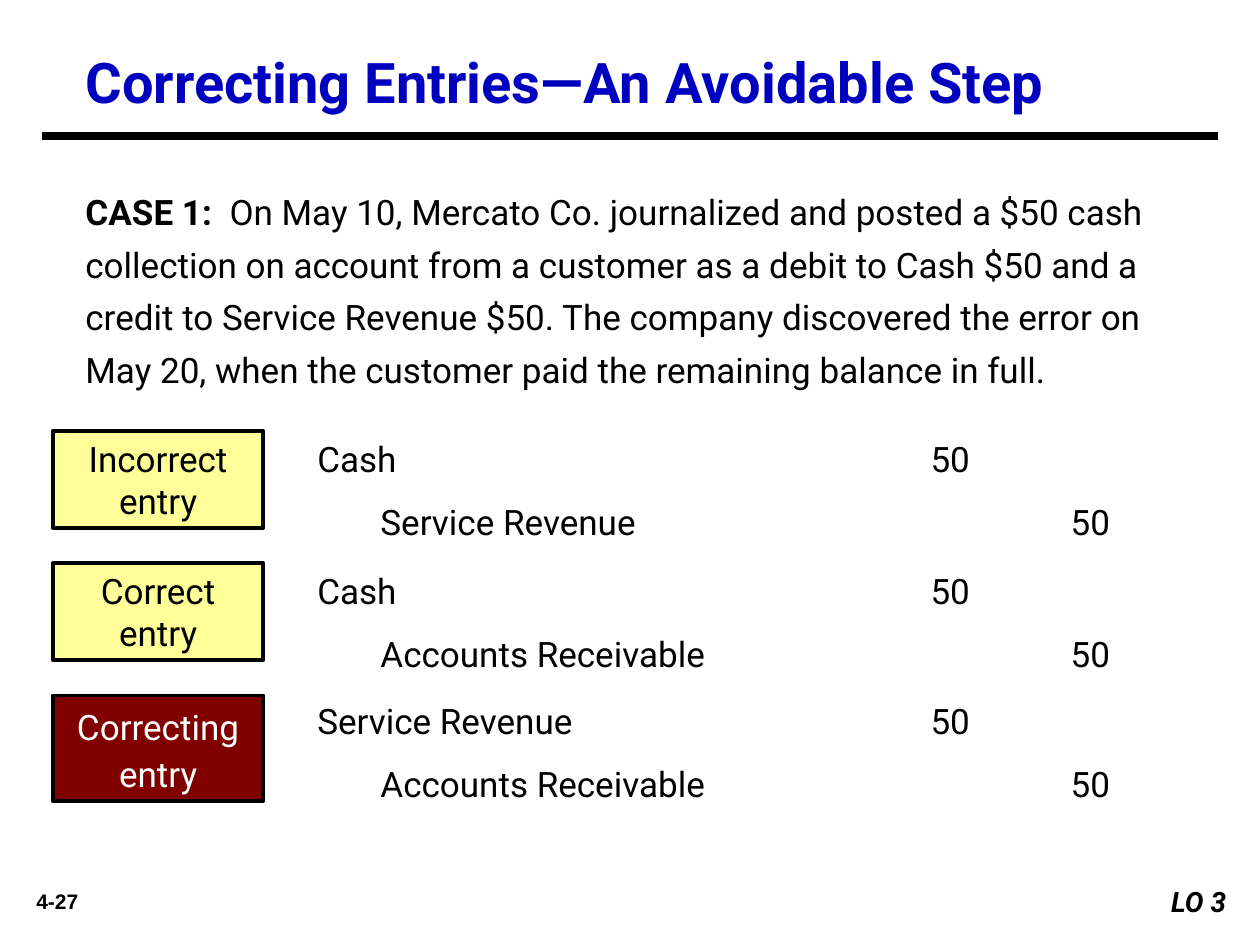
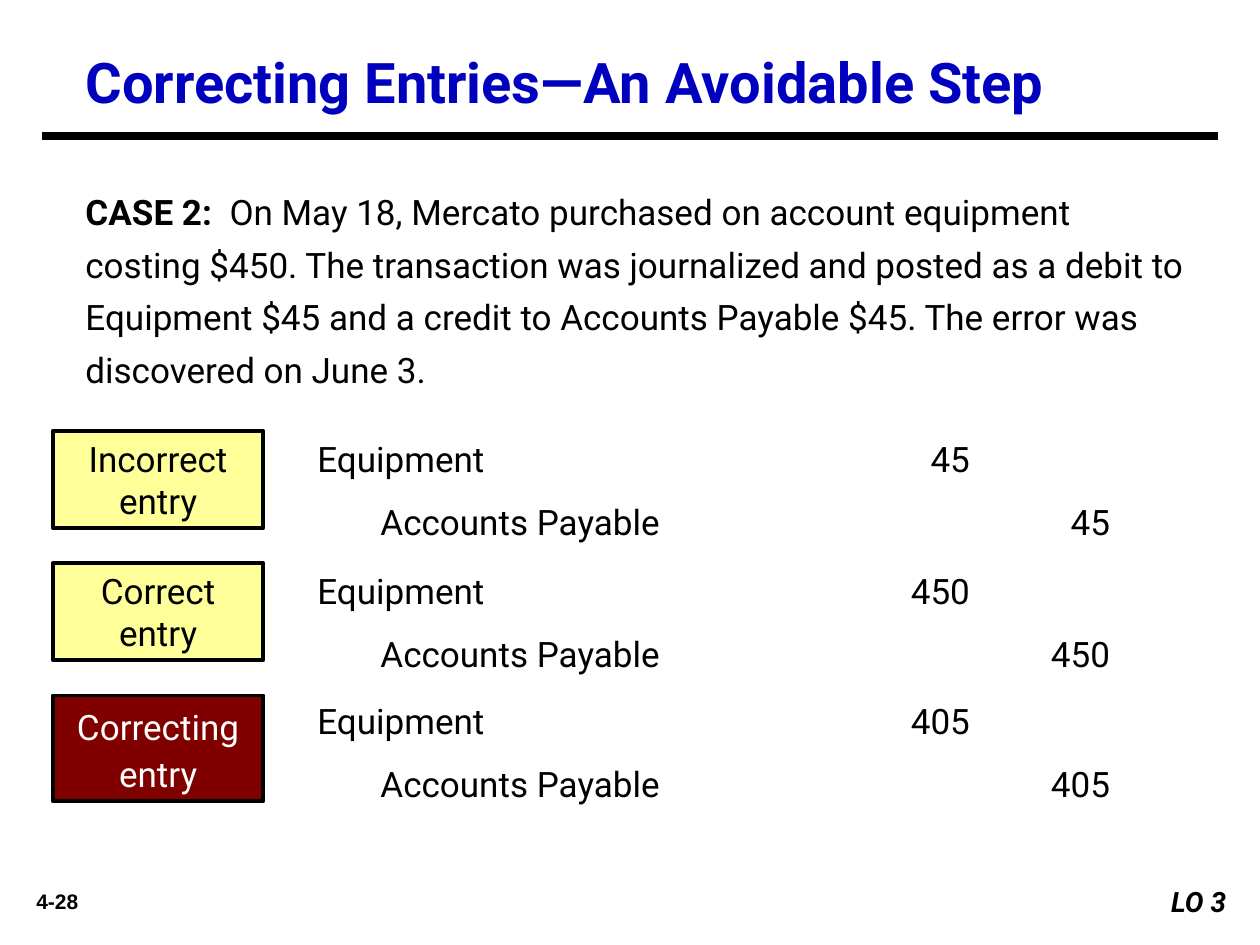
from lxml import etree
from pptx import Presentation
from pptx.dml.color import RGBColor
from pptx.enum.shapes import MSO_CONNECTOR, MSO_SHAPE
from pptx.enum.text import MSO_ANCHOR, PP_ALIGN
from pptx.oxml.ns import qn
from pptx.util import Inches, Pt

TITLE = "Correcting Entries—An Avoidable Step"
OBJECTIVE = "LO 3"

# Each entry: debit account, credit account, amount
CASES = [
    {
        "page": "4-27",
        "case": "CASE 1:  ",
        "story": "On May 10, Mercato Co. journalized and posted a $50 cash collection "
                 "on account from a customer as a debit to Cash $50 and a credit to "
                 "Service Revenue $50. The company discovered the error on May 20, "
                 "when the customer paid the remaining balance in full.",
        "entries": [
            ("Cash", "Service Revenue", "50"),
            ("Cash", "Accounts Receivable", "50"),
            ("Service Revenue", "Accounts Receivable", "50"),
        ],
    },
    {
        "page": "4-28",
        "case": "CASE 2:  ",
        "story": "On May 18, Mercato purchased on account equipment costing $450. "
                 "The transaction was journalized and posted as a debit to Equipment "
                 "$45 and a credit to Accounts Payable $45. The error was discovered "
                 "on June 3.",
        "entries": [
            ("Equipment", "Accounts Payable", "45"),
            ("Equipment", "Accounts Payable", "450"),
            ("Equipment", "Accounts Payable", "405"),
        ],
    },
]

BLACK = RGBColor(0x00, 0x00, 0x00)
WHITE = RGBColor(0xFF, 0xFF, 0xFF)
BLUE = RGBColor(0x00, 0x00, 0xBF)
YELLOW = RGBColor(0xFF, 0xFF, 0x99)
MAROON = RGBColor(0x80, 0x00, 0x00)

FONT = "Roboto"
FOOTER_FONT = "Arial"
LEFT, RIGHT, CENTER = PP_ALIGN.LEFT, PP_ALIGN.RIGHT, PP_ALIGN.CENTER
TOP = MSO_ANCHOR.TOP

# Label text, label top, label height, entry top, fill, text colour, line spacing
LABELS = [
    ("Incorrect\ventry", 3.42, 0.77, 3.42, YELLOW, BLACK, 1.0),
    ("Correct\ventry", 4.47, 0.77, 4.47, YELLOW, BLACK, 1.0),
    ("Correcting\ventry", 5.52, 0.84, 5.5, MAROON, WHITE, 1.1),
]

# Journal columns
JOURNAL_LEFT, JOURNAL_WIDTH = 2.42, 7
ROW_STEP, ROW_HEIGHT = 0.5, 0.45
DEBIT_INSET, CREDIT_INSET = 0.1, 0.6
DEBIT_EDGE, CREDIT_EDGE = 7.7, 8.81  # right edges of the amounts


def style(p, size=20, color=BLACK, bold=None, italic=None, name=FONT, align=LEFT):
    p.alignment = align
    p.font.size, p.font.name = Pt(size), name
    p.font.bold, p.font.italic = bold, italic
    p.font.color.rgb = color


def add_text(slide, text, left, top, width, height, **font):
    box = slide.shapes.add_textbox(*map(Inches, (left, top, width, height)))
    tf = box.text_frame
    tf.word_wrap = True
    p = tf.paragraphs[0]
    p.text = text
    style(p, **font)
    return tf


def add_box(slide, text, left, top, width, height, fill, line=None, **font):
    sp = slide.shapes.add_shape(MSO_SHAPE.RECTANGLE,
                                *map(Inches, (left, top, width, height)))
    sp.shadow.inherit = False
    sp.fill.solid()
    sp.fill.fore_color.rgb = fill
    if line is None:
        sp.line.fill.background()
    else:
        sp.line.color.rgb, sp.line.width = line, Pt(2.25)
    tf = sp.text_frame
    tf.vertical_anchor = TOP
    p = tf.paragraphs[0]
    p.text = text
    style(p, **font)
    return tf


def add_row(slide, account, amount, top, inset, edge):
    """Account at the inset, amount right-aligned at the column edge."""
    tf = add_text(slide, "", JOURNAL_LEFT, top, JOURNAL_WIDTH, ROW_HEIGHT)
    tf.margin_left = Inches(inset)
    p = tf.paragraphs[0]
    p.text = f"{account}\t{amount}"
    pPr = p._p.get_or_add_pPr()
    tabs = etree.Element(qn("a:tabLst"))
    etree.SubElement(tabs, qn("a:tab"), algn="r",
                     pos=str(Inches(edge - JOURNAL_LEFT - inset)))
    pPr.insert(0, tabs)


def add_frame(slide, page):
    """Title, rule and footers shared by all slides."""
    add_text(slide, TITLE, 0.58, 0.33, 9.08, 0.61, size=32, color=BLUE, bold=True)
    rule = slide.shapes.add_connector(MSO_CONNECTOR.STRAIGHT, Inches(0.33),
                                      Inches(1.08), Inches(9.67), Inches(1.08))
    rule.line.color.rgb, rule.line.width = BLACK, Pt(4.5)
    etree.SubElement(rule._element.spPr, qn("a:effectLst"))
    add_text(slide, page, 0.08, 7, 0.75, 0.3, size=12, bold=True,
             name=FOOTER_FONT, align=CENTER)
    add_box(slide, OBJECTIVE, 9, 6.97, 0.83, 0.37, WHITE, size=16, bold=True,
            italic=True, align=RIGHT)


def add_case(prs, case):
    slide = prs.slides.add_slide(prs.slide_layouts[6])
    add_frame(slide, case["page"])

    # Case description
    tf = add_text(slide, "", 0.58, 1.38, 9, 1.78)
    p = tf.paragraphs[0]
    p.line_spacing = 1.25
    for text, bold in ((case["case"], True), (case["story"], False)):
        r = p.add_run()
        r.text, r.font.bold = text, bold

    # Labels and journal entries
    for label, (debit, credit, amount) in zip(LABELS, case["entries"]):
        text, label_top, height, top, fill, color, spacing = label
        tf = add_box(slide, text, 0.42, label_top, 1.67, height, fill,
                     line=BLACK, color=color, align=CENTER)
        tf.margin_left = tf.margin_right = 0
        tf.paragraphs[0].line_spacing = spacing
        add_row(slide, debit, amount, top, DEBIT_INSET, DEBIT_EDGE)
        add_row(slide, credit, amount, top + ROW_STEP, CREDIT_INSET, CREDIT_EDGE)


def main():
    prs = Presentation()
    prs.slide_width, prs.slide_height = Inches(10), Inches(7.5)
    for case in CASES:
        add_case(prs, case)
    prs.save("out.pptx")


if __name__ == "__main__":
    main()
